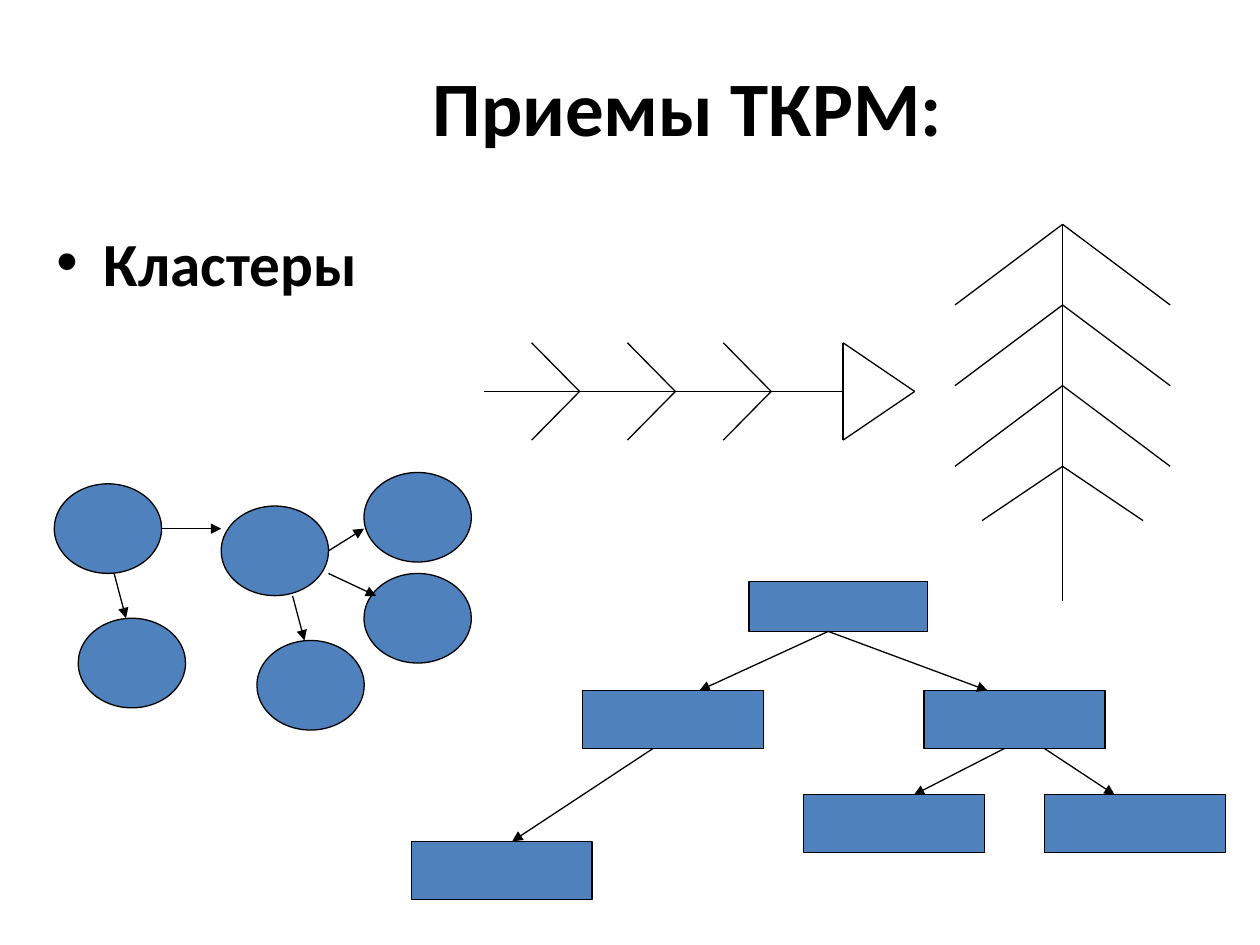
from typing import NamedTuple

from lxml.etree import SubElement as Sub
from pptx import Presentation
from pptx.dml.color import RGBColor
from pptx.enum.shapes import MSO_CONNECTOR as Link, MSO_SHAPE as Kind
from pptx.enum.text import MSO_ANCHOR as Anchor, PP_ALIGN as Align
from pptx.oxml.ns import qn
from pptx.util import Pt

BLACK = RGBColor(0x00, 0x00, 0x00)
BLUE = RGBColor(0x4F, 0x81, 0xBD)
FONT = "Calibri"
THIN = 0.75


class Line(NamedTuple):
    x1: float
    y1: float
    x2: float
    y2: float


class Node(NamedTuple):
    x: float
    y: float
    w: float
    h: float


deck = Presentation()
deck.slide_width, deck.slide_height = Pt(720), Pt(540)
slide = deck.slides.add_slide(deck.slide_layouts[6])
shapes = slide.shapes


def add_text(text: str, box: Node, *, size: float, align=Align.LEFT,
             anchor=Anchor.TOP, indent: float = 0) -> None:
    frame = shapes.add_textbox(*map(Pt, box)).text_frame
    frame.word_wrap = True
    frame.vertical_anchor = anchor
    para = frame.paragraphs[0]
    para.alignment = align
    if indent:
        props = para._p.get_or_add_pPr()
        props.set("marL", str(Pt(indent)))
        props.set("indent", str(-Pt(indent)))
        Sub(props, qn("a:buFont"), typeface="Arial")
        Sub(props, qn("a:buChar"), char="•")
    run = para.add_run()
    run.text = text
    font = run.font
    font.name, font.size, font.bold = FONT, Pt(size), True
    font.color.rgb = BLACK


def add_line(line: Line, arrow: bool = False) -> None:
    item = shapes.add_connector(Link.STRAIGHT, *map(Pt, line))
    item.line.color.rgb = BLACK
    item.line.width = Pt(THIN)
    if arrow:
        Sub(item.line._get_or_add_ln(), qn("a:tailEnd"), type="triangle")
    Sub(item._element.spPr, qn("a:effectLst"))


def add_node(kind: Kind, node: Node) -> None:
    item = shapes.add_shape(kind, *map(Pt, node))
    item.shadow.inherit = False
    item.fill.solid()
    item.fill.fore_color.rgb = BLUE
    item.line.color.rgb = BLACK
    item.line.width = Pt(THIN)


def add_graph(kind: Kind, nodes: list[Node], links: list[Line]) -> None:
    for node in nodes:
        add_node(kind, node)
    for link in links:
        add_line(link, arrow=True)


# Heading and bullet
add_text("Приемы ТКРМ:", Node(105, 26, 576, 69), size=44,
         align=Align.CENTER, anchor=Anchor.MIDDLE)
add_text("Кластеры", Node(25.2, 125, 222, 98), size=35, indent=27)

# Fish bone: spine, head, three pairs of ribs
MID, HALF = 223.7, 27.8
NECK, NOSE = 481.8, 522.7
add_line(Line(276.5, MID, NECK, MID))
add_line(Line(NECK, MID - HALF, NECK, MID + HALF))
for side in (-HALF, HALF):
    add_line(Line(NECK, MID + side, NOSE, MID))
    for i in range(3):
        tip = 331.2 + 54.75 * i
        add_line(Line(tip, MID, tip - 27.4, MID + side))

# Fir tree: trunk, three wide tiers, one narrow tier
TRUNK, TOP, STEP = 607.2, 128.2, 46.1
add_line(Line(TRUNK, TOP, TRUNK, 343.5))
for i, (reach, drop) in enumerate([(61.5, STEP)] * 3 + [(46, 31)]):
    y = TOP + STEP * i
    for side in (-reach, reach):
        add_line(Line(TRUNK, y, TRUNK + side, y + drop))

# Cluster of ovals
spots = [(31, 276.5), (126.4, 289.2), (208, 270),
         (44.7, 353.3), (146.8, 366), (208, 327.7)]
add_graph(Kind.OVAL, [Node(x, y, 61.3, 51.2) for x, y in spots], [
    Line(65.2, 327.7, 72, 353.3),
    Line(92.3, 302.1, 126.4, 302.1),
    Line(187.7, 314.8, 208, 302.1),
    Line(187.7, 327.7, 215, 340.5),
    Line(167.2, 340.5, 174, 366),
])

# Hierarchy of boxes: root, two branches, three leaves
ROW1, ROW2, TALL = 394.6, 454.2, 33.1
FOOT, LOW = ROW1 + TALL, 480.8
spots = [(528, ROW1), (332.8, ROW1), (596.8, ROW2), (459.1, ROW2), (235, LOW)]
root = Node(428, 332.4, 102.2, 28.4)
base = root.y + root.h
add_graph(Kind.RECTANGLE, [root] + [Node(x, y, 103.4, TALL) for x, y in spots], [
    Line(473.3, base, 399.7, ROW1),
    Line(473.3, base, 564.3, ROW1),
    Line(574, FOOT, 522.2, ROW2),
    Line(596.8, FOOT, 637, ROW2),
    Line(373.2, FOOT, 292.7, LOW),
])

deck.save("out.pptx")
